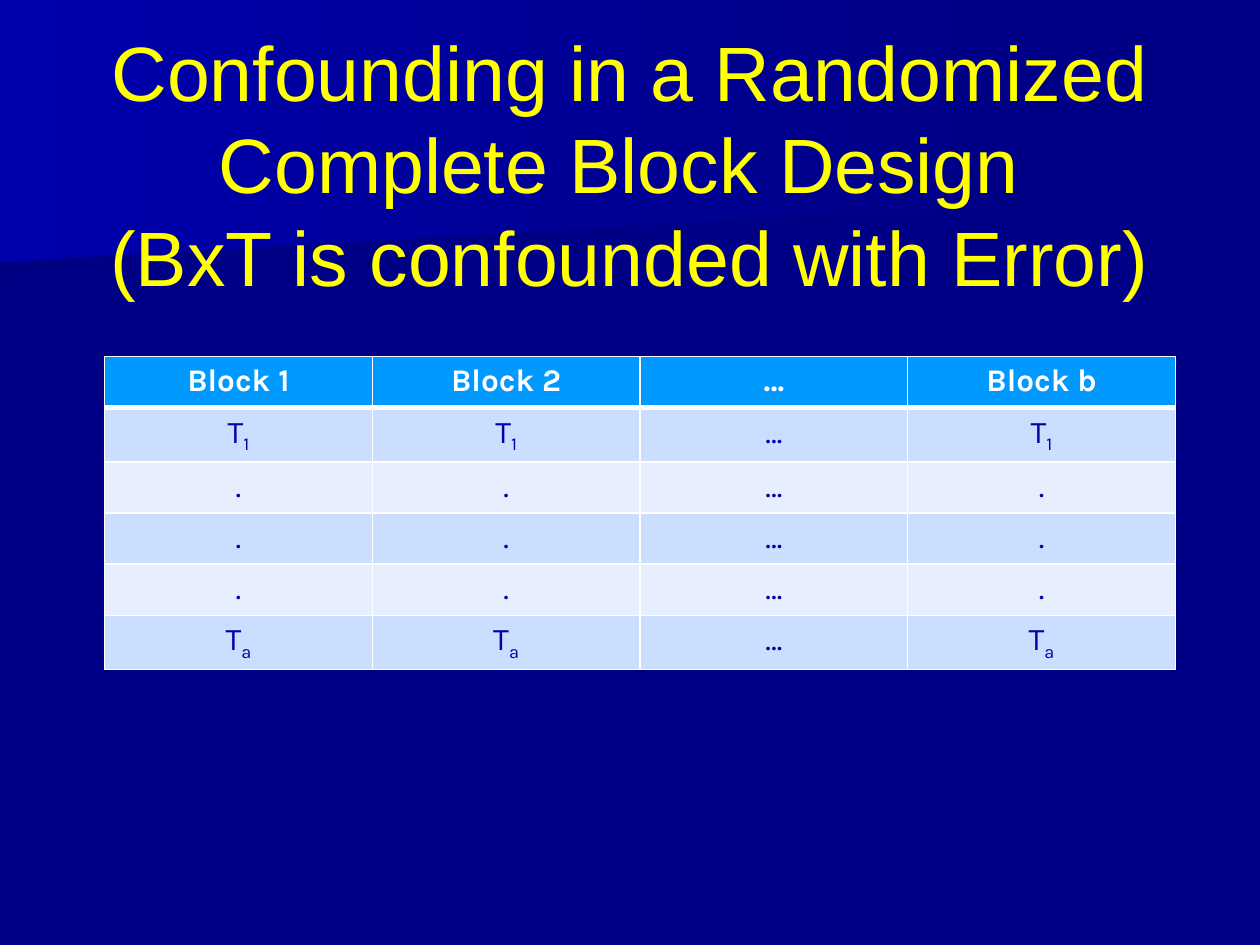
from dataclasses import dataclass

from lxml import etree
from pptx import Presentation
from pptx import util as u
from pptx.dml.color import RGBColor
from pptx.enum import text
from pptx.oxml.ns import qn

PX = 9144  # 100 px to the inch


@dataclass(frozen=True)
class Theme:
    navy: str = "000086"
    deep: str = "000083"
    royal: str = "0000AC"
    yellow: str = "FFFF00"
    white: str = "FFFFFF"
    header: str = "0099FF"
    bands: tuple = ("CBDEFF", "E7EFFF")
    title_font: str = "Arial"
    table_font: str = "Karla"
    title_size: int = 44
    table_size: int = 18


theme = Theme()


def add_span(para, words, font, size, color, bold=False):
    span = para.add_run()
    span.text = words
    span.font.name = font
    span.font.size = u.Pt(size)
    span.font.bold = bold
    span.font.color.rgb = RGBColor.from_string(color)
    return span


def set_borders(cell, color, widths):
    props = cell._tc.get_or_add_tcPr()
    for index, (side, points) in enumerate(widths.items()):
        line = etree.Element(qn(f"a:ln{side}"), w=str(u.Pt(points)))
        fill = etree.SubElement(line, qn("a:solidFill"))
        etree.SubElement(fill, qn("a:srgbClr"), val=color)
        props.insert(index, line)


deck = Presentation()
deck.slide_width, deck.slide_height = 1000 * PX, 750 * PX
page = deck.slides.add_slide(deck.slide_layouts[5])
page.background.fill.solid()
page.background.fill.fore_color.rgb = RGBColor.from_string(theme.navy)

# Background sweeps
sweeps = [
    ([(778, 153), (0, 217), (0, 101), (779, 101), (778, 128)], theme.deep),
    ([(792, 162), (0, 208), (0, 0), (792, 0)], theme.royal),
]
for points, start_color in sweeps:
    builder = page.shapes.build_freeform(*points[0], scale=PX)
    builder.add_line_segments(points[1:], close=True)
    sweep = builder.convert_to_shape()
    sweep.shadow.inherit = False
    sweep.line.fill.background()
    sweep.fill.gradient()
    sweep.fill.gradient_angle = 0
    for stop, color in zip(sweep.fill.gradient_stops, (start_color, theme.navy)):
        stop.color.rgb = RGBColor.from_string(color)

# Title, brought in front of the sweeps
title = page.shapes.title
page.shapes._spTree.append(title._element)
title.left, title.top, title.width, title.height = (
    n * PX for n in (75, 67, 850, 125))
frame = title.text_frame
frame.word_wrap = True
frame.auto_size = text.MSO_AUTO_SIZE.NONE
frame.vertical_anchor = text.MSO_ANCHOR.MIDDLE
para = frame.paragraphs[0]
para.alignment = text.PP_ALIGN.CENTER
title_style = (theme.title_font, theme.title_size, theme.yellow)
add_span(para, "Confounding in a Randomized Complete Block Design ", *title_style)
para.add_line_break()
add_span(para, "(BxT is confounded with Error)", *title_style)

# Block table: each entry is a base and an optional subscript
treatments = [("T", "1"), (".", ""), (".", ""), (".", ""), ("T", "a")]
dots = ("…", "")
rows = [[("Block 1", ""), ("Block 2", ""), dots, ("Block b", "")]]
rows += [[entry, entry, dots, entry] for entry in treatments]
table = page.shapes.add_table(
    len(rows), 4, 83 * PX, 283 * PX, 850 * PX, 244 * PX).table

for r, row in enumerate(rows):
    is_header = r == 0
    fill_color = theme.header if is_header else theme.bands[(r - 1) % 2]
    style = (theme.table_font, theme.table_size,
             theme.white if is_header else theme.royal, is_header)
    for c, (base, subscript) in enumerate(row):
        cell = table.cell(r, c)
        cell.fill.solid()
        cell.fill.fore_color.rgb = RGBColor.from_string(fill_color)
        set_borders(cell, theme.white, {
            "L": 1, "R": 1, "T": 3 if r == 1 else 1, "B": 3 if is_header else 1})
        para = cell.text_frame.paragraphs[0]
        para.alignment = text.PP_ALIGN.CENTER
        add_span(para, base, *style)
        if subscript:
            span = add_span(para, subscript, *style)
            span.font._element.set("baseline", "-25000")

deck.save("out.pptx")
